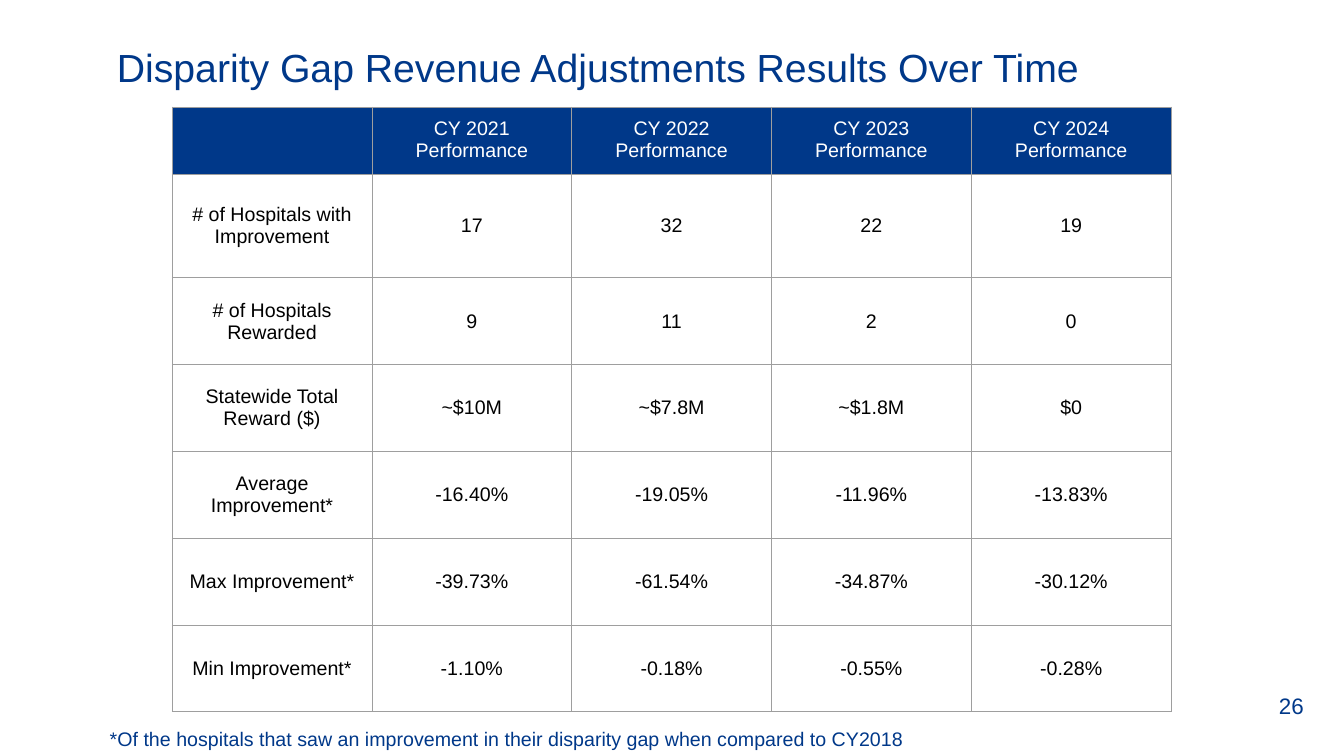
from dataclasses import dataclass

from lxml import etree
from pptx import Presentation
from pptx.dml.color import RGBColor
from pptx.enum.text import MSO_ANCHOR, MSO_AUTO_SIZE, PP_ALIGN
from pptx.oxml.ns import qn
from pptx.util import Pt

LEFT, CENTER = PP_ALIGN.LEFT, PP_ALIGN.CENTER
TOP, MIDDLE = MSO_ANCHOR.TOP, MSO_ANCHOR.MIDDLE
NO_AUTOFIT = MSO_AUTO_SIZE.NONE
TITLE_ONLY = 5


@dataclass(frozen=True)
class Theme:
    font: str = "Arial"
    navy: str = "003889"
    white: str = "FFFFFF"
    black: str = "000000"
    grid: str = "9E9E9E"
    title_size: float = 28
    number_size: float = 16
    body_size: float = 14
    grid_width: float = 0.75
    inset: float = 7.2


HEADER = ["", "CY 2021 Performance", "CY 2022 Performance",
          "CY 2023 Performance", "CY 2024\nPerformance"]
RESULTS = [
    ["# of Hospitals with Improvement", "17", "32", "22", "19"],
    ["# of Hospitals Rewarded", "9", "11", "2", "0"],
    ["Statewide Total Reward ($)", "~$10M", "~$7.8M", "~$1.8M", "$0"],
    ["Average Improvement*", "-16.40%", "-19.05%", "-11.96%", "-13.83%"],
    ["Max Improvement*", "-39.73%", "-61.54%", "-34.87%", "-30.12%"],
    ["Min Improvement*", "-1.10%", "-0.18%", "-0.55%", "-0.28%"],
]
ROW_HEIGHTS = [46, 74] + [62] * 5
COLUMN_WIDTH = 142.7


class SlideBuilder:
    def __init__(self, page, theme):
        self.page = page
        self.theme = theme

    def fill_text(self, frame, text, size, color, align=LEFT):
        """Fill a text frame, one paragraph for each line of text."""
        for index, line in enumerate(text.split("\n")):
            para = frame.add_paragraph() if index else frame.paragraphs[0]
            para.alignment = align
            span = para.add_run()
            span.text = line
            span.font.name = self.theme.font
            span.font.size = Pt(size)
            span.font.bold = False
            span.font.color.rgb = RGBColor.from_string(color)

    def title(self, text, left, top, width, height):
        box = self.page.shapes.title
        box.left, box.top = Pt(left), Pt(top)
        box.width, box.height = Pt(width), Pt(height)
        frame = box.text_frame
        frame.auto_size = NO_AUTOFIT
        frame.vertical_anchor = TOP
        self.fill_text(frame, text, self.theme.title_size, self.theme.navy)

    def label(self, text, left, top, width, height, size, inset, anchor=TOP):
        box = self.page.shapes.add_textbox(Pt(left), Pt(top), Pt(width), Pt(height))
        frame = box.text_frame
        frame.word_wrap = True
        frame.vertical_anchor = anchor
        frame.margin_left = frame.margin_right = Pt(self.theme.inset)
        frame.margin_top = frame.margin_bottom = Pt(inset)
        self.fill_text(frame, text, size, self.theme.navy)

    def border(self, cell):
        properties = cell._tc.get_or_add_tcPr()
        for position, side in enumerate(("lnL", "lnR", "lnT", "lnB")):
            line = etree.Element(qn(f"a:{side}"), w=str(Pt(self.theme.grid_width)))
            fill = etree.SubElement(line, qn("a:solidFill"))
            etree.SubElement(fill, qn("a:srgbClr"), val=self.theme.grid)
            properties.insert(position, line)

    def table(self, rows, left, top, column_width, row_heights):
        """Draw a gridded table whose first row is the navy header."""
        columns = len(rows[0])
        table = self.page.shapes.add_table(
            len(rows), columns, Pt(left), Pt(top),
            Pt(column_width * columns), Pt(sum(row_heights))).table
        table.first_row = table.horz_banding = False
        for column in table.columns:
            column.width = Pt(column_width)
        for row_index, (values, height) in enumerate(zip(rows, row_heights)):
            table.rows[row_index].height = Pt(height)
            for column_index, value in enumerate(values):
                self.cell(table.cell(row_index, column_index), value, row_index == 0)

    def cell(self, cell, value, is_header):
        theme = self.theme
        cell.margin_left = cell.margin_right = Pt(theme.inset)
        cell.margin_top = cell.margin_bottom = Pt(theme.inset)
        cell.vertical_anchor = TOP if is_header else MIDDLE
        if is_header:
            cell.fill.solid()
            cell.fill.fore_color.rgb = RGBColor.from_string(theme.navy)
        else:
            cell.fill.background()
        self.border(cell)
        if value:
            color = theme.white if is_header else theme.black
            self.fill_text(cell.text_frame, value, theme.body_size, color, CENTER)


def main():
    deck = Presentation()
    deck.slide_width, deck.slide_height = Pt(960), Pt(540)
    page = deck.slides.add_slide(deck.slide_layouts[TITLE_ONLY])
    theme = Theme()
    builder = SlideBuilder(page, theme)
    builder.label("26", 906.5, 489.6, 45.4, 28.8, theme.number_size, 3.6, MIDDLE)
    builder.title("Disparity Gap Revenue Adjustments Results Over Time",
                  76.3, 27.4, 828, 80)
    builder.table([HEADER] + RESULTS, 123, 76.5, COLUMN_WIDTH, ROW_HEIGHTS)
    builder.label("*Of the hospitals that saw an improvement in their disparity gap "
                  "when compared to CY2018",
                  71.3, 512, 688, 28, theme.body_size, theme.inset)
    deck.save("out.pptx")


if __name__ == "__main__":
    main()
